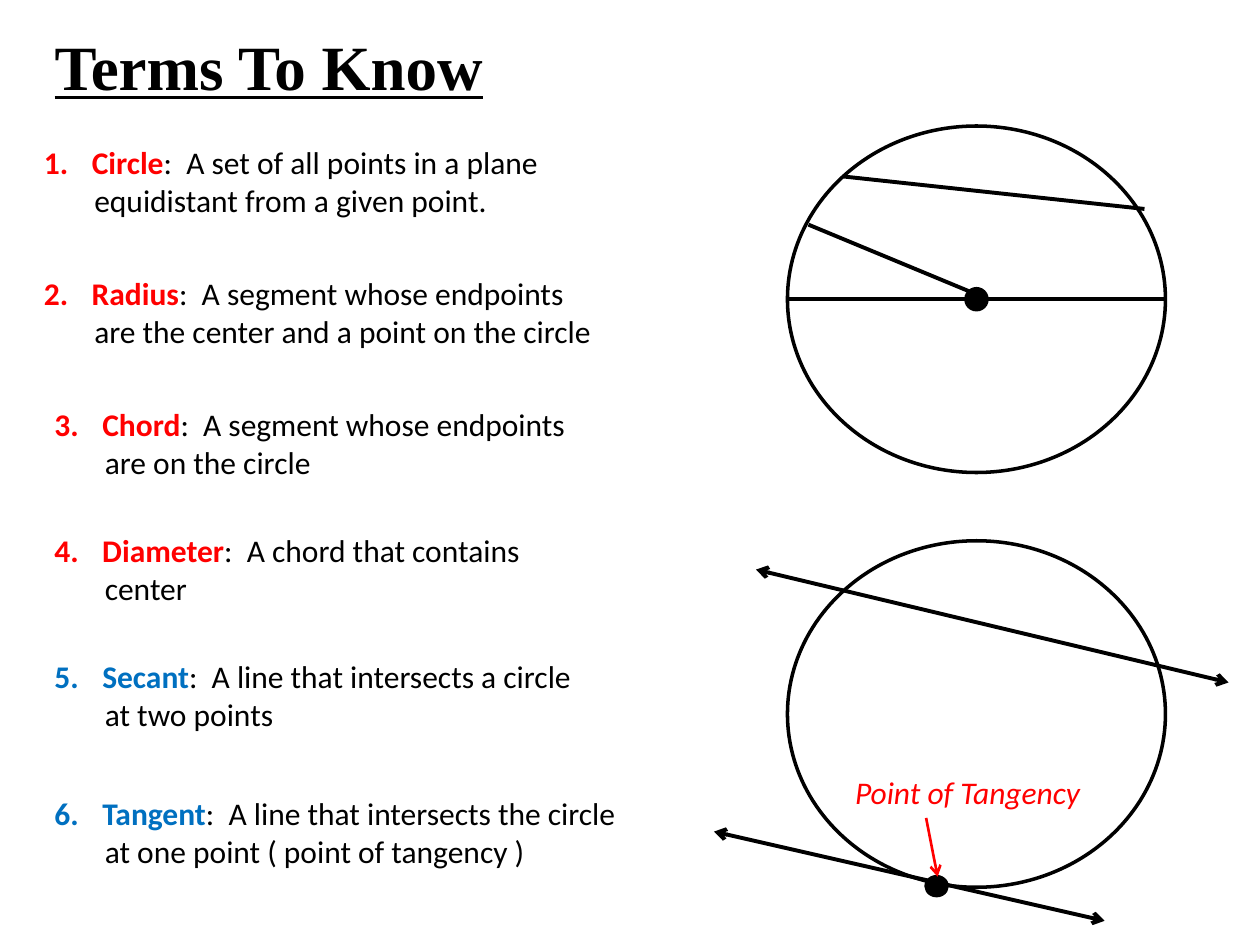
from dataclasses import dataclass

from lxml.etree import SubElement
from pptx import Presentation
from pptx.dml.color import RGBColor
from pptx.enum.shapes import MSO_CONNECTOR, MSO_SHAPE
from pptx.enum.text import MSO_ANCHOR, MSO_AUTO_SIZE, PP_ALIGN
from pptx.oxml.ns import qn
from pptx.util import Inches, Pt


@dataclass(frozen=True)
class Theme:
    ink: RGBColor = RGBColor(0x00, 0x00, 0x00)
    red: RGBColor = RGBColor(0xFF, 0x00, 0x00)
    blue: RGBColor = RGBColor(0x00, 0x70, 0xC0)
    title_font: str = "Times New Roman"
    body_font: str = "Calibri"
    title_size: float = 36
    body_size: float = 18
    outline: float = 2
    segment: float = 2.25
    pointer: float = 1.5


@dataclass(frozen=True)
class Box:
    """A rectangle in grid columns and rows."""
    column: float
    row: float
    columns: float
    rows: float


@dataclass(frozen=True)
class Definition:
    term: str
    first_line: str
    second_line: str
    color: RGBColor
    column: float
    row: float
    columns: float


@dataclass(frozen=True)
class Segment:
    start: tuple[float, float]
    end: tuple[float, float]
    color: RGBColor
    width: float
    start_arrow: bool = False
    end_arrow: bool = False


THEME = Theme()
SLIDE_WIDTH, SLIDE_HEIGHT = Inches(10), Inches(7.5)
GRID_COLUMNS, GRID_ROWS = 120, 90
TEXT_ROWS = 8.5
NUMBER_INDENT = Inches(0.38)
SECOND_LINE_INDENT = Inches(0.4)

DEFINITIONS = [
    Definition("Circle", "A set of all points in a plane",
               "equidistant from a given point.", THEME.red, 3, 13, 50),
    Definition("Radius", "A segment whose endpoints",
               "are the center and a point on the circle", THEME.red, 3, 25.5, 55.2),
    Definition("Chord", "A segment whose endpoints",
               "are on the circle", THEME.red, 4, 38, 52.2),
    Definition("Diameter", "A chord that contains",
               "center", THEME.red, 4, 50, 47),
    Definition("Secant", "A line that intersects a circle",
               "at two points", THEME.blue, 4, 62, 52),
    Definition("Tangent", "A line that intersects the circle",
               "at one point ( point of tangency )", THEME.blue, 4, 75, 56.3),
]

CIRCLES = [Box(75, 12, 36, 33), Box(75, 51.5, 36, 33)]
DOTS = [Box(92, 27.5, 2, 2), Box(88.2, 83.5, 2, 1.8)]
SEGMENTS = [
    Segment((94, 28.45), (77, 21.4), THEME.ink, THEME.segment),  # radius
    Segment((80.25, 16.8), (109, 19.9), THEME.ink, THEME.segment),  # chord
    Segment((75, 28.45), (111, 28.45), THEME.ink, THEME.segment),  # diameter
    Segment((72, 54.25), (117, 65), THEME.ink, THEME.segment, True, True),  # secant
    Segment((68, 79.2), (105.2, 87.7), THEME.ink, THEME.segment, True, True),  # tangent
    Segment((88.2, 77.9), (89.3, 83.5), THEME.red, THEME.pointer, end_arrow=True),
]


def across(columns: float) -> int:
    return round(SLIDE_WIDTH * columns / GRID_COLUMNS)


def down(rows: float) -> int:
    return round(SLIDE_HEIGHT * rows / GRID_ROWS)


def place(box: Box) -> tuple[int, int, int, int]:
    return across(box.column), down(box.row), across(box.columns), down(box.rows)


def style_run(run, color: RGBColor, font: str = THEME.body_font,
              size: float = THEME.body_size, bold: bool = False) -> None:
    run.font.name, run.font.size, run.font.bold = font, Pt(size), bold
    run.font.color.rgb = color


def add_title(slide, text: str, box: Box) -> None:
    title = slide.shapes.title
    title.left, title.top, title.width, title.height = place(box)
    frame = title.text_frame
    frame.text = text
    frame.word_wrap = False
    frame.auto_size = MSO_AUTO_SIZE.NONE
    frame.vertical_anchor = MSO_ANCHOR.TOP
    paragraph = frame.paragraphs[0]
    paragraph.alignment = PP_ALIGN.LEFT
    run = paragraph.runs[0]
    style_run(run, THEME.ink, THEME.title_font, THEME.title_size, bold=True)
    run.font.underline = True


def add_text(slide, box: Box):
    frame = slide.shapes.add_textbox(*place(box)).text_frame
    frame.word_wrap = False
    return frame


def number_paragraph(paragraph, number: int) -> None:
    properties = paragraph._p.get_or_add_pPr()
    properties.set("marL", str(NUMBER_INDENT))
    properties.set("indent", str(-NUMBER_INDENT))
    SubElement(properties, qn("a:buFont"), typeface="+mj-lt")
    SubElement(properties, qn("a:buAutoNum"), type="arabicPeriod", startAt=str(number))


def add_definition(slide, number: int, item: Definition) -> None:
    frame = add_text(slide, Box(item.column, item.row, item.columns, TEXT_ROWS))
    first = frame.paragraphs[0]
    number_paragraph(first, number)
    term, meaning = first.add_run(), first.add_run()
    term.text, meaning.text = item.term, f":  {item.first_line}"
    style_run(term, item.color, bold=True)
    style_run(meaning, THEME.ink)
    second = frame.add_paragraph()
    second.text = item.second_line
    second._p.get_or_add_pPr().set("marL", str(SECOND_LINE_INDENT))
    style_run(second.runs[0], THEME.ink)


def add_label(slide, text: str, box: Box) -> None:
    frame = add_text(slide, box)
    frame.text = text
    run = frame.paragraphs[0].runs[0]
    style_run(run, THEME.red)
    run.font.italic = True


def add_ellipse(slide, box: Box, filled: bool) -> None:
    shape = slide.shapes.add_shape(MSO_SHAPE.OVAL, *place(box))
    shape.shadow.inherit = False
    shape.line.color.rgb = THEME.ink
    shape.line.width = Pt(THEME.outline)
    if filled:
        shape.fill.solid()
        shape.fill.fore_color.rgb = THEME.ink
    else:
        shape.fill.background()


def add_segment(slide, segment: Segment) -> None:
    (start_column, start_row), (end_column, end_row) = segment.start, segment.end
    connector = slide.shapes.add_connector(
        MSO_CONNECTOR.STRAIGHT, across(start_column), down(start_row),
        across(end_column), down(end_row))
    connector.line.color.rgb = segment.color
    connector.line.width = Pt(segment.width)
    line = connector.line._get_or_add_ln()
    for tag, wanted in (("a:headEnd", segment.start_arrow), ("a:tailEnd", segment.end_arrow)):
        if wanted:
            SubElement(line, qn(tag), type="arrow")
    SubElement(connector._element.spPr, qn("a:effectLst"))


def main() -> None:
    presentation = Presentation()
    presentation.slide_width, presentation.slide_height = SLIDE_WIDTH, SLIDE_HEIGHT
    slide = presentation.slides.add_slide(presentation.slide_layouts[5])
    for circle in CIRCLES:
        add_ellipse(slide, circle, filled=False)
    add_title(slide, "Terms To Know", Box(4, 2, 43.6, TEXT_ROWS))
    for number, item in enumerate(DEFINITIONS, start=1):
        add_definition(slide, number, item)
    for dot in DOTS:
        add_ellipse(slide, dot, filled=True)
    add_label(slide, "Point of Tangency", Box(80.25, 73, 24.1, 4.8))
    for segment in SEGMENTS:
        add_segment(slide, segment)
    presentation.save("out.pptx")


if __name__ == "__main__":
    main()
